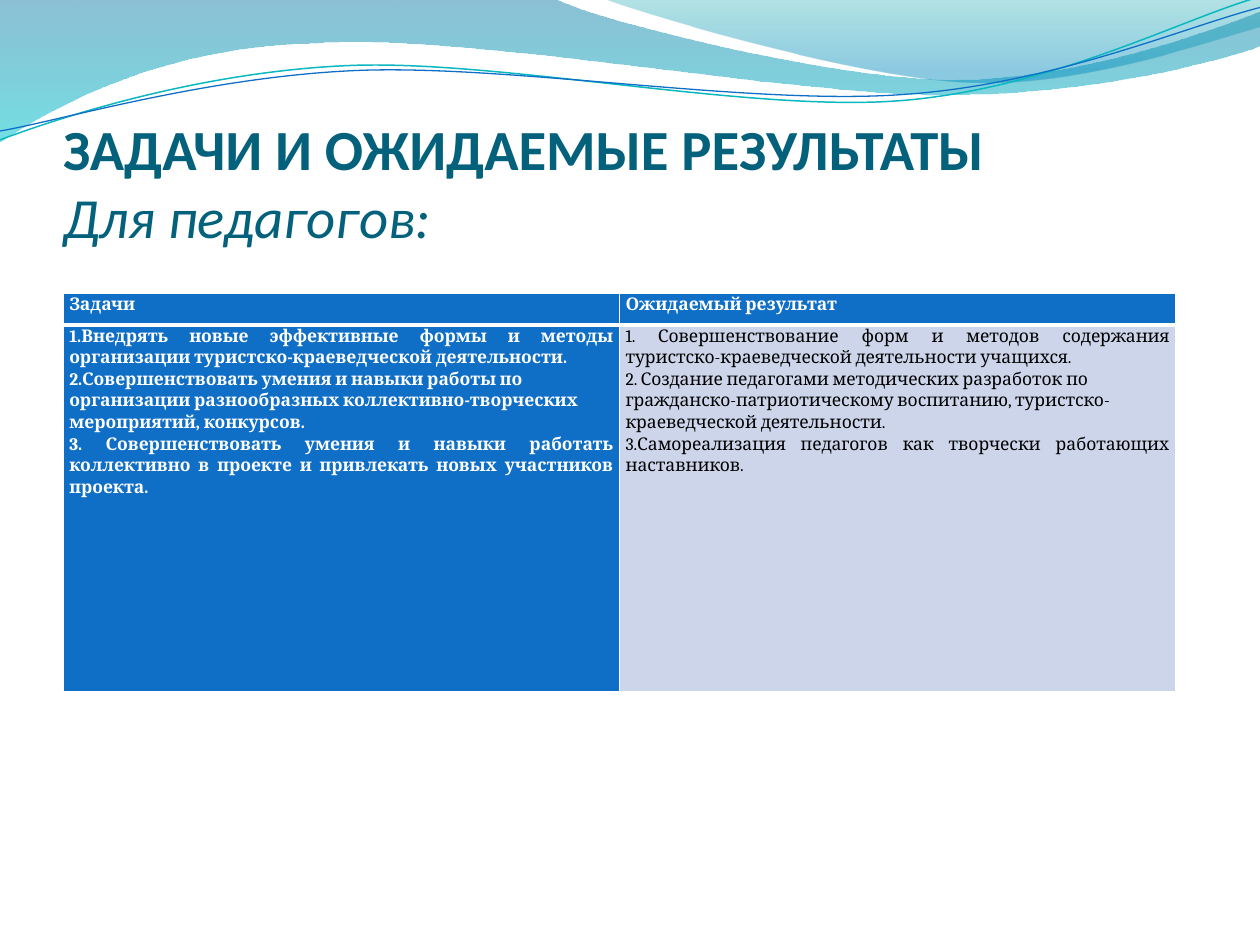
from math import cos, radians, sin

from lxml.etree import SubElement
from pptx import Presentation
from pptx.dml.color import RGBColor
from pptx.enum.text import MSO_ANCHOR as Anchor, MSO_AUTO_SIZE as AutoSize, PP_ALIGN as Align
from pptx.oxml.ns import qn
from pptx.util import Inches, Pt

BLUE = RGBColor(0x0F, 0x6F, 0xC6)
TEAL = RGBColor(0x0A, 0xB8, 0xBF)
TITLE_TEAL = RGBColor(0x04, 0x61, 0x7B)
PALE = RGBColor(0xCC, 0xD5, 0xEA)
WHITE = RGBColor(0xFF, 0xFF, 0xFF)
BLACK = RGBColor(0, 0, 0)

LOWER_WAVE = [
    [(0, 0)], [(4.4, -0.01)],
    [(4.76, 0.17), (6.64, 0.63), (7.58, 0.63)],
    [(8.53, 0.63), (9.58, 0.26), (10, 0.09)], [(10.01, 0.36)],
    [(9.83, 0.44), (8.7, 0.76), (7.46, 0.75)],
    [(6.22, 0.75), (3.82, 0.28), (2.57, 0.34)],
    [(1.29, 0.36), (0.46, 0.83), (-0.01, 1.13)], [(0, 0)],
]
UPPER_WAVE = [
    [(4.79, -0.01)],
    [(5.09, 0.11), (6.82, 0.62), (7.69, 0.65)],
    [(8.56, 0.69), (9.61, 0.32), (10, 0.21)], [(10, 0)], [(4.79, -0.01)],
]
TEAL_LINE = [
    [(0, 1.11)],
    [(0.48, 0.93), (1.58, 0.57), (2.77, 0.52)],
    [(3.95, 0.47), (5.93, 0.89), (7.13, 0.8)],
    [(8.33, 0.71), (9.38, 0.15), (9.98, -0.02)],
]
BLUE_LINE = [
    [(0, 1.04)],
    [(0.47, 0.96), (1.64, 0.61), (2.83, 0.56)],
    [(4.03, 0.51), (5.97, 0.84), (7.17, 0.75)],
    [(8.36, 0.67), (9.41, 0.21), (10, 0.06)],
]
LOWER_STOPS = [(0, RGBColor(0x00, 0x74, 0xA1), 45), (1, RGBColor(0x00, 0xC6, 0xCF), 55)]
UPPER_STOPS = [(0, RGBColor(0x00, 0xA1, 0xA9), 30), (0.8, RGBColor(0x00, 0x8B, 0xBF), 45)]
TILT = 2.7

ROWS = [
    [["Задачи"], ["Ожидаемый результат"]],
    [
        [
            "1.Внедрять новые эффективные формы и методы организации туристско-краеведческой деятельности. ",
            "2.Совершенствовать умения и навыки работы по организации разнообразных коллективно-творческих мероприятий, конкурсов.",
            "3. Совершенствовать умения и навыки работать коллективно в проекте и привлекать новых участников проекта.",
        ],
        [
            "1. Совершенствование форм и методов содержания туристско-краеведческой деятельности учащихся.",
            "2. Создание педагогами методических разработок по гражданско-патриотическому воспитанию, туристско-краеведческой деятельности.",
            "3.Самореализация педагогов как творчески работающих наставников.",
        ],
    ],
]


def assign(target, values):
    """Set attributes of an object from a dict."""
    for name, value in values.items():
        setattr(target, name, value)


def turn(point, pivot, degrees):
    """Turn a point clockwise about a pivot."""
    angle = radians(degrees)
    dx, dy = point[0] - pivot[0], point[1] - pivot[1]
    return (pivot[0] + dx * cos(angle) - dy * sin(angle), pivot[1] + dx * sin(angle) + dy * cos(angle))


class SlideWriter:
    """Holds the text styles and the slide being filled."""

    title_font = {"name": "Calibri", "size": Pt(32.4)}
    table_font = {"name": "Cambria", "size": Pt(10)}

    def __init__(self, page):
        """Keep the slide."""
        self.page = page

    def outline(self, steps, closed):
        """Draw a freeform whose three-point steps are cubic curves."""
        first, *rest = [(Inches(x), Inches(y)) for step in steps for x, y in step]
        builder = self.page.shapes.build_freeform(*first)
        builder.add_line_segments(rest, close=closed)
        shape = builder.convert_to_shape()
        shape.shadow.inherit = False
        segments = iter(list(shape._element.iter(qn("a:lnTo"))))
        for step in steps[1:]:
            start, *others = [next(segments) for _ in step]
            if others:
                start.tag = qn("a:cubicBezTo")
                for other in others:
                    start.append(other[0])
                    other.getparent().remove(other)
        return shape

    def wave(self, steps, stops):
        """Draw a band with a translucent vertical gradient."""
        shape = self.outline(steps, True)
        shape.line.fill.background()
        shape.fill.gradient()
        shape.fill.gradient_angle = 270
        for stop, (position, color, opacity) in zip(shape.fill.gradient_stops, stops):
            stop.position = position
            stop.color.rgb = color
        for tag, (_, _, opacity) in zip(shape._element.spPr.iter(qn("a:srgbClr")), stops):
            SubElement(tag, qn("a:alpha"), val=str(opacity * 1000))

    def curve(self, steps, pivot, color, width):
        """Draw an open curved line tilted about its centre."""
        level = [[turn(point, pivot, TILT) for point in step] for step in steps]
        shape = self.outline(level, False)
        shape.rotation = 360 - TILT
        shape.fill.background()
        shape.line.color.rgb = color
        shape.line.width = Pt(width)

    def title(self, lines):
        """Fill the title placeholder, in front of the waves."""
        box = self.page.shapes.title
        box._element.getparent().append(box._element)
        assign(box, {"left": Inches(0.5), "top": Inches(0.77), "width": Inches(9), "height": Inches(1.96)})
        assign(box.text_frame, {
            "vertical_anchor": Anchor.BOTTOM, "auto_size": AutoSize.NONE, "word_wrap": True,
            "margin_left": 0, "margin_right": 0, "margin_top": Inches(0.05), "margin_bottom": Inches(0.75),
        })
        para = box.text_frame.paragraphs[0]
        assign(para, {"alignment": Align.LEFT, "line_spacing": 1.0})
        for index, (text, style) in enumerate(lines):
            if index:
                para.add_line_break()
            span = para.add_run()
            span.text = text
            assign(span.font, self.title_font | style)
            span.font.color.rgb = TITLE_TEAL

    def cell(self, cell, texts, fill, color, bold, bottom):
        """Fill one table cell with paragraphs, borders and colour."""
        assign(cell, {"margin_left": Inches(0.05), "margin_right": Inches(0.05), "margin_top": 0, "margin_bottom": 0})
        for side, width in (("L", 1), ("R", 1), ("T", 1), ("B", bottom)):
            edge = SubElement(cell._tc.get_or_add_tcPr(), qn(f"a:ln{side}"), w=str(Pt(width)))
            SubElement(SubElement(edge, qn("a:solidFill")), qn("a:srgbClr"), val=str(WHITE))
        cell.fill.solid()
        cell.fill.fore_color.rgb = fill
        for index, text in enumerate(texts):
            para = cell.text_frame.add_paragraph() if index else cell.text_frame.paragraphs[0]
            assign(para, {"alignment": Align.LEFT if index == 1 else Align.JUSTIFY, "line_spacing": 1.07})
            span = para.add_run()
            span.text = text
            assign(span.font, self.table_font | {"bold": bold})
            span.font.color.rgb = color

    def table(self, rows):
        """Add the table of tasks and expected results."""
        frame = self.page.shapes.add_table(2, 2, Inches(0.5), Inches(2.33), Inches(8.83), Inches(3.16))
        table = frame.table
        for row, height in zip(table.rows, (0.25, 2.91)):
            row.height = Inches(height)
        for r, row in enumerate(rows):
            for c, texts in enumerate(row):
                plain = r == 1 and c == 1
                self.cell(table.cell(r, c), texts, PALE if plain else BLUE,
                          BLACK if plain else WHITE, not plain, 1 if r else 3)


def main():
    """Build and save the slide."""
    deck = Presentation()
    assign(deck, {"slide_width": Inches(10), "slide_height": Inches(7.5)})
    writer = SlideWriter(deck.slides.add_slide(deck.slide_layouts[5]))
    writer.wave(LOWER_WAVE, LOWER_STOPS)
    writer.wave(UPPER_WAVE, UPPER_STOPS)
    writer.curve(TEAL_LINE, (4.99, 0.58), TEAL, 0.85)
    writer.curve(BLUE_LINE, (5, 0.59), BLUE, 0.75)
    writer.title([
        ("ЗАДАЧИ И ОЖИДАЕМЫЕ РЕЗУЛЬТАТЫ", {"bold": True}),
        ("Для педагогов:", {"bold": False, "italic": True}),
    ])
    writer.table(ROWS)
    deck.save("out.pptx")


if __name__ == "__main__":
    main()
